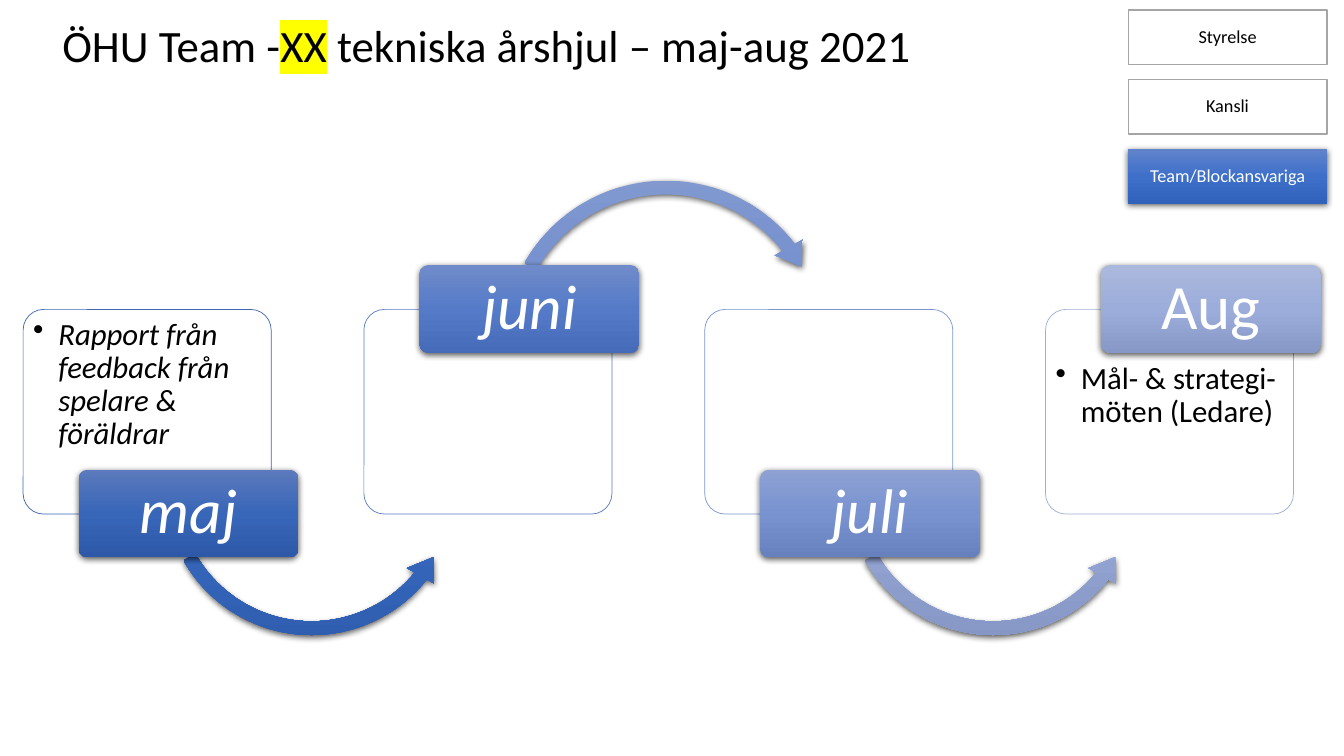
"""Build the May to August yearly wheel slide for the technical team."""
import pptx
import pptx.dml.color
import pptx.enum.shapes
import pptx.enum.text
import pptx.oxml
import pptx.oxml.ns
import pptx.util
from lxml import etree

Inches = pptx.util.Inches
Pt = pptx.util.Pt
RGBColor = pptx.dml.color.RGBColor
SHAPE = pptx.enum.shapes.MSO_SHAPE
ALIGN = pptx.enum.text.PP_ALIGN
ANCHOR = pptx.enum.text.MSO_ANCHOR
qn = pptx.oxml.ns.qn

FONT = "Calibri"
WHITE = RGBColor(0xFF, 0xFF, 0xFF)
BLACK = RGBColor(0x00, 0x00, 0x00)
GREY = RGBColor(0xA5, 0xA5, 0xA5)
YELLOW = RGBColor(0xFF, 0xFF, 0x00)

TITLE = [("ÖHU Team -", None), ("XX", YELLOW), (" tekniska årshjul – maj-aug 2021", None)]

MONTHS = [
    {"name": "maj", "task": "Rapport från feedback från spelare & föräldrar", "italic": True,
     "outline": RGBColor(0x3E, 0x67, 0xB2), "label": ("5C7ABD", "3866B8", "2D59A8"),
     "arrow": ("5E7EC4", "3B6BC1", "2F5EB1")},
    {"name": "juni", "task": None, "italic": True,
     "outline": RGBColor(0x5A, 0x7C, 0xC3), "label": ("708BCA", "557BC8", "466BB8"),
     "arrow": ("8299D0", "6B8ACE", "5A79BC")},
    {"name": "juli", "task": None, "italic": True,
     "outline": RGBColor(0x7D, 0x95, 0xCD), "label": ("8DA1D3", "7993D1", "6781BE"),
     "arrow": ("AAB7DD", "9BACDB", "8697C6")},
    {"name": "Aug", "task": "Mål- & strategi-möten (Ledare)", "italic": False,
     "outline": RGBColor(0x9F, 0xAE, 0xD8), "label": ("ABB8DD", "9CADDB", "8798C6"),
     "arrow": None},
]

LEGEND = [("Styrelse", None), ("Kansli", None),
          ("Team/Blockansvariga", ("6183CB", "3E70CA", "3062BB"))]

LOWER_ARROW = {"kind": SHAPE.LEFT_CIRCULAR_ARROW, "offset": 1.31, "top": 3.29, "size": 3.1,
               "adjust": (0.044, 5.581, 23.336, 90.245, 0.051)}
UPPER_ARROW = {"kind": SHAPE.CIRCULAR_ARROW, "offset": 1.29, "top": 1.7, "size": 3.41,
               "adjust": (0.04, 5.017, 193.227, 125.755, 0.047)}

PANEL_LEFT, PANEL_STEP, PANEL_TOP, PANEL_WIDTH, PANEL_HEIGHT = 0.23, 3.38, 3.07, 2.46, 2.03
LABEL_OFFSET, LABEL_WIDTH, LABEL_HEIGHT = 0.55, 2.18, 0.87
LABEL_TOPS = (4.66, 2.63)
TASK_INSETS = (0.03, 0.47)
LEGEND_LEFT, LEGEND_TOP, LEGEND_STEP, LEGEND_WIDTH, LEGEND_HEIGHT = 11.19, 0.1, 0.69, 1.97, 0.54


def add_plain(slide, kind, left, top, width, height, adjust=()):
    shape = slide.shapes.add_shape(kind, *map(Inches, (left, top, width, height)))
    shape.shadow.inherit = False
    for index, value in enumerate(adjust):
        shape.adjustments[index] = value
    return shape


def fill_outlined(shape, outline, width):
    shape.fill.solid()
    shape.fill.fore_color.rgb = WHITE
    shape.line.color.rgb = outline
    shape.line.width = Pt(width)


def fill_raised(shape, colours):
    shape.line.fill.background()
    stops = "".join(f'<a:gs pos="{50000 * i}"><a:srgbClr val="{c}"/></a:gs>'
                    for i, c in enumerate(colours))
    properties = shape._element.spPr
    properties.find(qn("a:prstGeom")).addnext(pptx.oxml.parse_xml(
        f'<a:gradFill {pptx.oxml.ns.nsdecls("a")} rotWithShape="1"><a:gsLst>{stops}</a:gsLst>'
        '<a:lin ang="5400000" scaled="0"/></a:gradFill>'))
    properties.find(qn("a:effectLst")).append(pptx.oxml.parse_xml(
        f'<a:outerShdw {pptx.oxml.ns.nsdecls("a")} blurRad="57150" dist="19050" dir="5400000"'
        ' algn="ctr" rotWithShape="0"><a:srgbClr val="000000"><a:alpha val="63000"/>'
        '</a:srgbClr></a:outerShdw>'))


def write(shape, runs, size, colour, italic=False, align=ALIGN.CENTER, anchor=ANCHOR.MIDDLE,
          insets=(0.1, 0.02, 0.1, 0.02), bullet=False):
    frame = shape.text_frame
    frame_format = {"word_wrap": True, "vertical_anchor": anchor}
    sides = ("margin_left", "margin_top", "margin_right", "margin_bottom")
    frame_format.update(zip(sides, map(Inches, insets)))
    for attribute, value in frame_format.items():
        setattr(frame, attribute, value)
    paragraph = frame.paragraphs[0]
    paragraph.alignment = align
    paragraph.line_spacing = 0.9
    if bullet:
        properties = paragraph._p.get_or_add_pPr()
        properties.set("marL", str(Inches(0.25)))
        properties.set("indent", str(Inches(-0.25)))
        etree.SubElement(properties, qn("a:buChar")).set("char", "•")
    for text, highlight in runs:
        run = paragraph.add_run()
        run.text = text
        run.font.color.rgb = colour
        for attribute, value in {"name": FONT, "size": Pt(size), "italic": italic}.items():
            setattr(run.font, attribute, value)
        if highlight:
            marker = etree.Element(qn("a:highlight"))
            etree.SubElement(marker, qn("a:srgbClr")).set("val", str(highlight))
            run._r.rPr.find(qn("a:solidFill")).addnext(marker)


def add_month(slide, index, month):
    raised = index % 2
    left = PANEL_LEFT + index * PANEL_STEP
    panel = add_plain(slide, SHAPE.ROUNDED_RECTANGLE, left, PANEL_TOP,
                      PANEL_WIDTH, PANEL_HEIGHT, (0.1,))
    fill_outlined(panel, month["outline"], 0.5)
    if month["task"]:
        write(panel, [(month["task"], None)], 22, BLACK, month["italic"], ALIGN.LEFT, ANCHOR.TOP,
              (0.04, TASK_INSETS[raised], 0.04, 0.03), bullet=True)
    if month["arrow"]:
        arc = UPPER_ARROW if raised else LOWER_ARROW
        arrow = add_plain(slide, arc["kind"], left + arc["offset"], arc["top"],
                          arc["size"], arc["size"], arc["adjust"])
        fill_raised(arrow, month["arrow"])
    label = add_plain(slide, SHAPE.ROUNDED_RECTANGLE, left + LABEL_OFFSET, LABEL_TOPS[raised],
                      LABEL_WIDTH, LABEL_HEIGHT, (0.1,))
    fill_raised(label, month["label"])
    write(label, [(month["name"], None)], 45, WHITE, month["italic"],
          insets=(0.09, 0.06, 0.09, 0.06))


def main():
    deck = pptx.Presentation()
    deck.slide_width, deck.slide_height = Inches(13.33), Inches(7.5)
    slide = deck.slides.add_slide(deck.slide_layouts[6])
    for index, month in enumerate(MONTHS):
        add_month(slide, index, month)
    for index, (role, gradient) in enumerate(LEGEND):
        box = add_plain(slide, SHAPE.RECTANGLE, LEGEND_LEFT, LEGEND_TOP + index * LEGEND_STEP,
                        LEGEND_WIDTH, LEGEND_HEIGHT)
        if gradient:
            fill_raised(box, gradient)
        else:
            fill_outlined(box, GREY, 1)
        write(box, [(role, None)], 13, WHITE if gradient else BLACK)
    title = slide.shapes.add_textbox(*map(Inches, (0.52, 0.1, 10.6, 0.75)))
    write(title, TITLE, 32, BLACK, align=ALIGN.LEFT, insets=(0.1, 0.05, 0.1, 0.05))
    deck.save("out.pptx")


if __name__ == "__main__":
    main()
